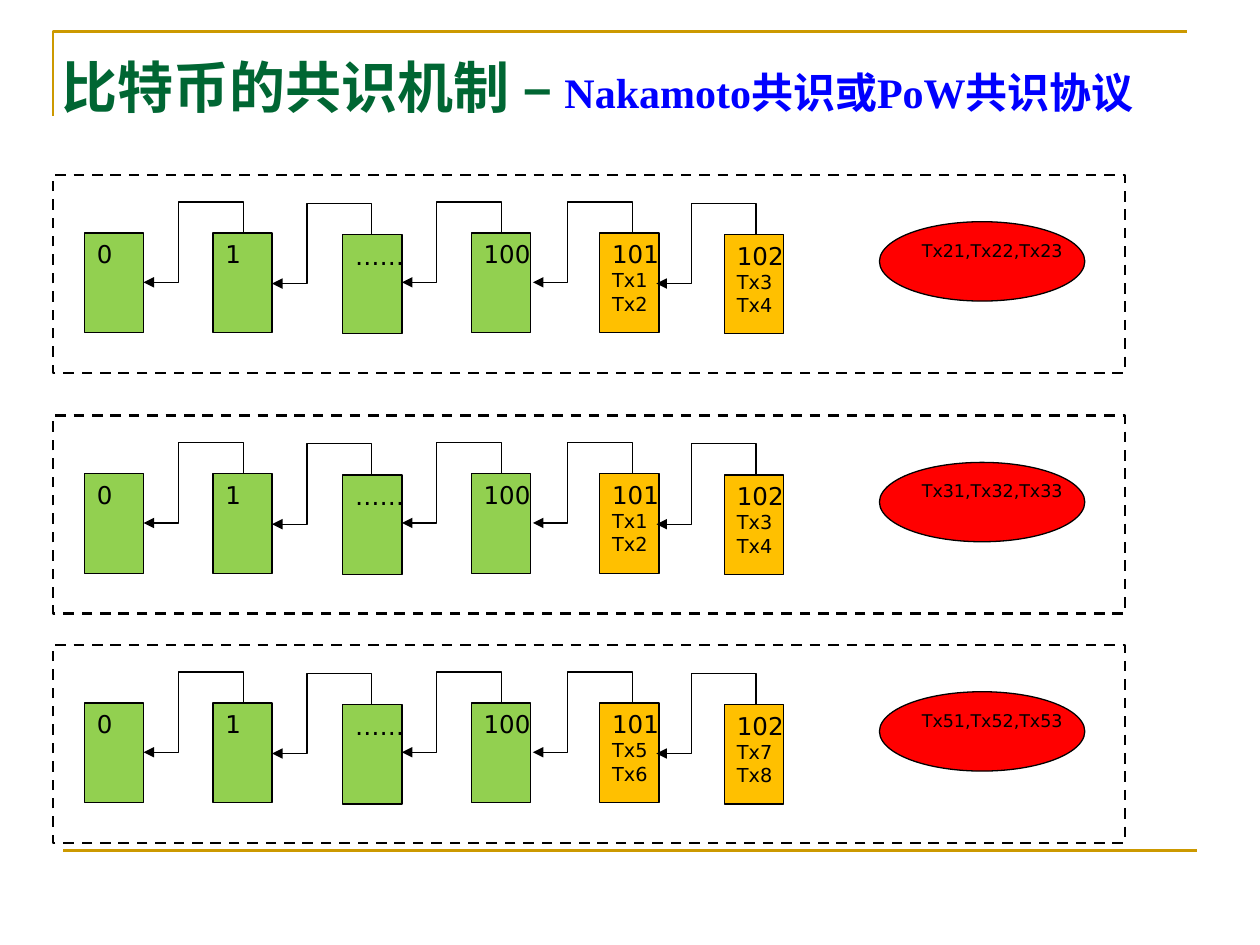
from lxml import etree
from pptx import Presentation
from pptx import util as u
from pptx.dml.color import RGBColor
from pptx.enum import dml, shapes, text
from pptx.oxml.ns import qn

COLORS = {
    "gold": "CC9900", "shared": "92D050", "recent": "FFC000", "pool": "FF0000",
    "ink": "000000", "title": "006633", "subtitle": "0000FF",
}
BODY_FONT, TITLE_FONT = "DejaVu Sans", "Times New Roman"
BLOCK_WIDTH, BLOCK_HEIGHT = 0.47, 0.79
HOP_WIDTH, HOP_HEIGHT = 0.79, 0.39

# Label, left and top of each block, and start of its link, from the chain's box
BLOCKS = [
    ("0", 0.25, 0.46, None),
    ("1", 1.27, 0.46, 1.51),
    ("……", 2.3, 0.47, 2.53),
    ("100", 3.32, 0.46, 3.56),
    ("101", 4.34, 0.46, 4.6),
    ("102", 5.33, 0.47, 5.58),
]
CHAINS = [
    (1.39, {"101": ["Tx1", "Tx2"], "102": ["Tx3", "Tx4"]}, "Tx21,Tx22,Tx23"),
    (3.3, {"101": ["Tx1", "Tx2"], "102": ["Tx3", "Tx4"]}, "Tx31,Tx32,Tx33"),
    (5.12, {"101": ["Tx5", "Tx6"], "102": ["Tx7", "Tx8"]}, "Tx51,Tx52,Tx53"),
]


def color(name):
    return RGBColor.from_string(COLORS[name])


def add_span(para, words, size, font=BODY_FONT, fill="ink", bold=False):
    span = para.add_run()
    span.text = words
    span.font.size = u.Pt(size)
    span.font.name = font
    span.font.bold = bold
    span.font.color.rgb = color(fill)


def style_line(line, name, width):
    line.color.rgb = color(name)
    line.width = u.Pt(width)


def add_box(page, kind, left, top, width, height, fill=None, line_width=0.75, lines=()):
    """Add an outlined shape; lines holds a (words, size) pair for each paragraph."""
    box = page.shapes.add_shape(
        kind, u.Inches(left), u.Inches(top), u.Inches(width), u.Inches(height))
    box.shadow.inherit = False
    if fill:
        box.fill.solid()
        box.fill.fore_color.rgb = color(fill)
    else:
        box.fill.background()
    style_line(box.line, "ink", line_width)
    frame = box.text_frame
    frame.word_wrap = False
    frame.vertical_anchor = text.MSO_ANCHOR.TOP
    for index, (words, size) in enumerate(lines):
        para = frame.add_paragraph() if index else frame.paragraphs[0]
        para.alignment = text.PP_ALIGN.LEFT
        add_span(para, words, size)
    return box


def add_line(page, kind, start, end, name, width):
    line = page.shapes.add_connector(kind, *(u.Inches(value) for value in (*start, *end)))
    style_line(line.line, name, width)
    etree.SubElement(line._element.spPr, qn("a:effectLst"))
    return line


def add_link(page, left, top):
    """Link the top of a block at (left, top) back to the side of the block before it."""
    middle_x, middle_y = left - HOP_WIDTH / 2, top + HOP_HEIGHT / 2
    # The frame lies on its side until it is turned by 270 degrees
    half_width, half_height = HOP_HEIGHT / 2, HOP_WIDTH / 2
    link = add_line(
        page, shapes.MSO_CONNECTOR.ELBOW,
        (middle_x + half_width, middle_y + half_height),
        (middle_x - half_width, middle_y - half_height), "ink", 0.75)
    properties = link._element.spPr
    properties.find(qn("a:xfrm")).set("rot", str(270 * 60000))
    geometry = properties.find(qn("a:prstGeom"))
    geometry.set("prst", "bentConnector4")
    guides = geometry.find(qn("a:avLst"))
    for name, value in (("adj1", -63500), ("adj2", 65000)):
        etree.SubElement(guides, qn("a:gd"), name=name, fmla=f"val {value}")
    etree.SubElement(properties.find(qn("a:ln")), qn("a:tailEnd"), type="triangle")


def add_chain(page, left, top, transactions, pool):
    rectangle = shapes.MSO_SHAPE.RECTANGLE
    for label, dx, dy, link_start in BLOCKS:
        entries = transactions.get(label, [])
        add_box(page, rectangle, left + dx, top + dy, BLOCK_WIDTH, BLOCK_HEIGHT,
                fill="recent" if entries else "shared",
                lines=[(label, 14)] + [(entry, 11) for entry in entries])
        if link_start:
            add_link(page, left + link_start, top + dy)
    add_box(page, shapes.MSO_SHAPE.OVAL, left + 6.56, top + 0.37, 1.63, 0.63,
            fill="pool", lines=[(pool, 10)])
    border = add_box(page, rectangle, left, top, 8.51, 1.57, line_width=1.5)
    border.line.dash_style = dml.MSO_LINE.DASH


def add_rules(page, left, top, width):
    """Draw the corner rule above the title and the rule at the foot."""
    builder = page.shapes.build_freeform(u.Inches(left), u.Inches(top + 0.67))
    builder.add_line_segments(
        [(u.Inches(left), u.Inches(top)), (u.Inches(left + width), u.Inches(top))],
        close=False)
    corner = builder.convert_to_shape()
    corner.shadow.inherit = False
    corner.fill.background()
    style_line(corner.line, "gold", 1.5)
    add_line(page, shapes.MSO_CONNECTOR.STRAIGHT, (left + 0.08, top + 6.5),
             (left + 0.08 + width, top + 6.5), "gold", 1.5)


def add_title(page, left, top, width, height):
    box = page.shapes.add_textbox(
        u.Inches(left), u.Inches(top), u.Inches(width), u.Inches(height))
    frame = box.text_frame
    frame.word_wrap = True
    frame.vertical_anchor = text.MSO_ANCHOR.BOTTOM
    for words, size, fill in (
            ("比特币的共识机制 –", 32, "title"),
            (" ", 28, "title"),
            ("Nakamoto共识或PoW共识协议", 24, "subtitle")):
        add_span(frame.paragraphs[0], words, size, font=TITLE_FONT, fill=fill, bold=True)


def main():
    deck = Presentation()
    deck.slide_width, deck.slide_height = u.Inches(10), u.Inches(7.5)
    page = deck.slides.add_slide(deck.slide_layouts[6])
    add_rules(page, 0.42, 0.25, 9)
    for top, transactions, pool in CHAINS:
        add_chain(page, 0.42, top, transactions, pool)
    add_title(page, 0.39, 0.29, 9.16, 0.71)
    deck.save("out.pptx")


if __name__ == "__main__":
    main()
